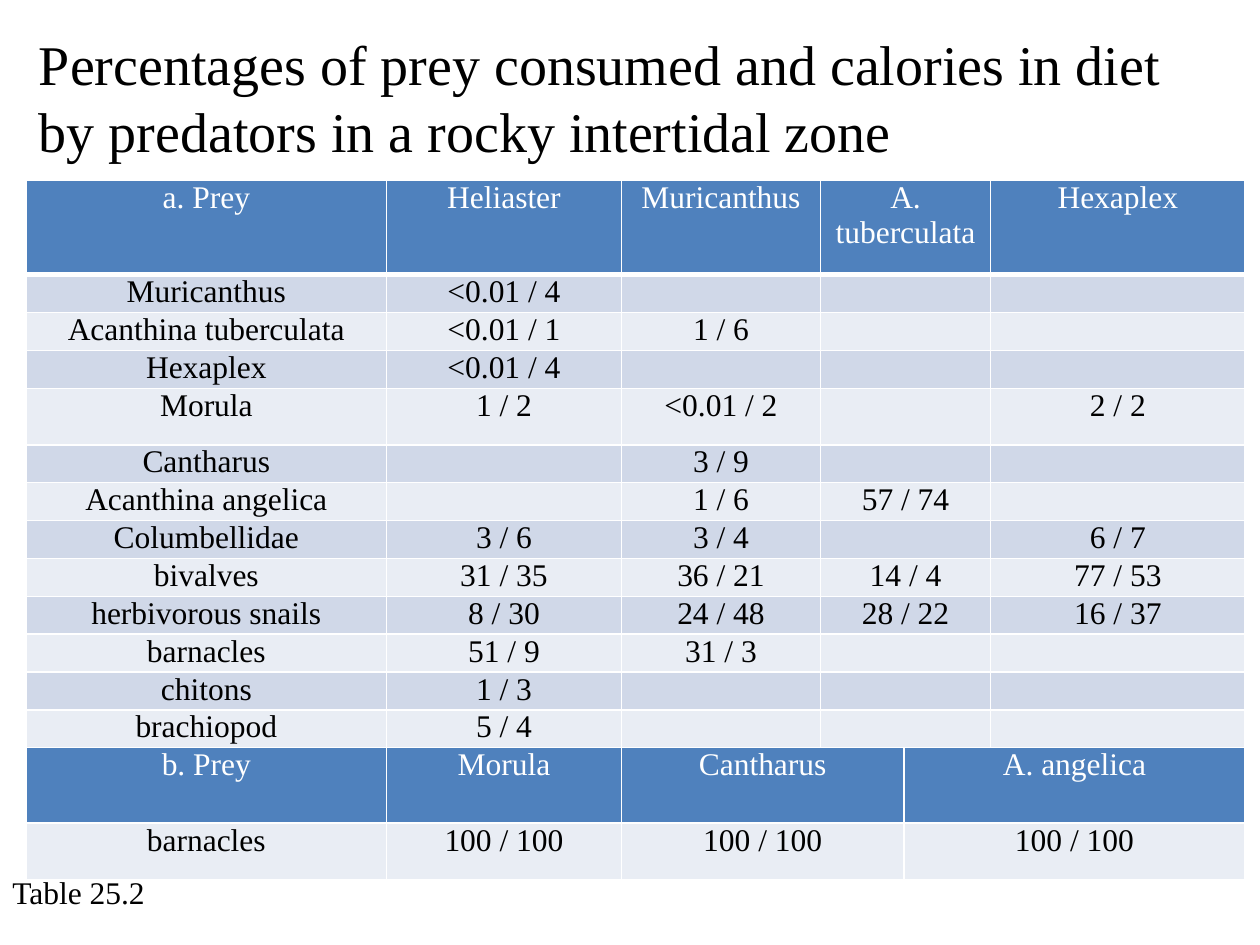
"""Build a slide with a table of prey shares in the diets of intertidal predators."""
from dataclasses import dataclass

from lxml.etree import SubElement
from pptx import Presentation
from pptx.dml.color import RGBColor as Color
from pptx.enum.text import MSO_ANCHOR as Anchor, MSO_AUTO_SIZE as AutoSize, PP_ALIGN as Align
from pptx.oxml.ns import qn
from pptx.util import Cm, Pt


@dataclass(frozen=True)
class Theme:
    font: str = "Times New Roman"
    text: str = "000000"
    light: str = "FFFFFF"
    header: str = "4F81BD"
    bands: tuple = ("E9EDF4", "D0D8E8")
    title_size: int = 32
    body_size: int = 18
    empty_size: int = 12
    border: int = 1
    header_border: int = 3


theme = Theme()


def format_text(paragraph, size, color, align):
    paragraph.alignment = align
    for run in paragraph.runs:
        run.font.name = theme.font
        run.font.size = Pt(size)
        run.font.color.rgb = Color.from_string(color)


def add_border(cell, side, width):
    properties = cell._tc.get_or_add_tcPr()
    line = SubElement(properties, qn(f"a:ln{side}"), w=str(Pt(width)))
    SubElement(SubElement(line, qn("a:solidFill")), qn("a:srgbClr"), val=theme.light)


rows = [
    ("a. Prey", "Heliaster", "Muricanthus", "A. tuberculata", "", "Hexaplex"),
    ("Muricanthus", "<0.01 / 4", "", "", "", ""),
    ("Acanthina tuberculata", "<0.01 / 1", "1 / 6", "", "", ""),
    ("Hexaplex", "<0.01 / 4", "", "", "", ""),
    ("Morula", "1 / 2", "<0.01 / 2", "", "", "2 / 2"),
    ("Cantharus", "", "3 / 9", "", "", ""),
    ("Acanthina angelica", "", "1 / 6", "57 / 74", "", ""),
    ("Columbellidae", "3 / 6", "3 / 4", "", "", "6 / 7"),
    ("bivalves", "31 / 35", "36 / 21", "14 / 4", "", "77 / 53"),
    ("herbivorous snails", "8 / 30", "24 / 48", "28 / 22", "", "16 / 37"),
    ("barnacles", "51 / 9", "31 / 3", "", "", ""),
    ("chitons", "1 / 3", "", "", "", ""),
    ("brachiopod", "5 / 4", "", "", "", ""),
    ("b. Prey", "Morula", "Cantharus", "", "A. angelica", ""),
    ("barnacles", "100 / 100", "100 / 100", "", "100 / 100", ""),
]
column_widths = [7.26, 4.74, 4.01, 1.68, 1.75, 5.13]
row_height = 0.76
tall_rows = {0: 1.91, 4: 1.14, 13: 1.52, 14: 1.14}
second_header = 13
header_rows = (0, second_header)

presentation = Presentation()
presentation.slide_width, presentation.slide_height = Cm(25.4), Cm(19.05)
slide = presentation.slides.add_slide(presentation.slide_layouts[5])

title = slide.shapes.title
title.left, title.top, title.width, title.height = Cm(0.53), Cm(0.47), Cm(23.95), Cm(3)
title.text_frame.text = "Percentages of prey consumed and calories in diet by predators in a rocky intertidal zone"
title.text_frame.auto_size = AutoSize.NONE
title.text_frame.vertical_anchor = Anchor.TOP
format_text(title.text_frame.paragraphs[0], theme.title_size, theme.text, Align.LEFT)

caption = slide.shapes.add_textbox(Cm(0), Cm(17.48), Cm(3.38), Cm(1.02))
caption.text_frame.text = "Table 25.2"
caption.text_frame.word_wrap = False
format_text(caption.text_frame.paragraphs[0], theme.body_size, theme.text, Align.LEFT)

heights = [tall_rows.get(index, row_height) for index in range(len(rows))]
frame = slide.shapes.add_table(
    len(rows), len(column_widths), Cm(0.53), Cm(3.63), Cm(sum(column_widths)), Cm(sum(heights))
)
table = frame.table
for column, width in zip(table.columns, column_widths):
    column.width = Cm(width)

for row_index, values in enumerate(rows):
    table.rows[row_index].height = Cm(heights[row_index])
    is_header = row_index in header_rows
    fill = theme.header if is_header else theme.bands[row_index % 2]
    color = theme.light if is_header else theme.text
    top = theme.header_border if row_index == 1 else theme.border
    bottom = theme.header_border if row_index == 0 else theme.border
    for column_index, value in enumerate(values):
        cell = table.cell(row_index, column_index)
        cell.margin_left = cell.margin_right = Cm(0.13)
        cell.margin_top = cell.margin_bottom = 0
        for side, width in zip("LRTB", (theme.border, theme.border, top, bottom)):
            add_border(cell, side, width)
        cell.fill.solid()
        cell.fill.fore_color.rgb = Color.from_string(fill)
        if value:
            cell.text_frame.text = value
            format_text(cell.text_frame.paragraphs[0], theme.body_size, color, Align.CENTER)
        else:
            paragraph = cell.text_frame.paragraphs[0]
            SubElement(paragraph._p, qn("a:endParaRPr"), sz=str(theme.empty_size * 100))
    for start in (2, 4) if row_index >= second_header else (3,):
        table.cell(row_index, start).merge(table.cell(row_index, start + 1))

presentation.save("out.pptx")
